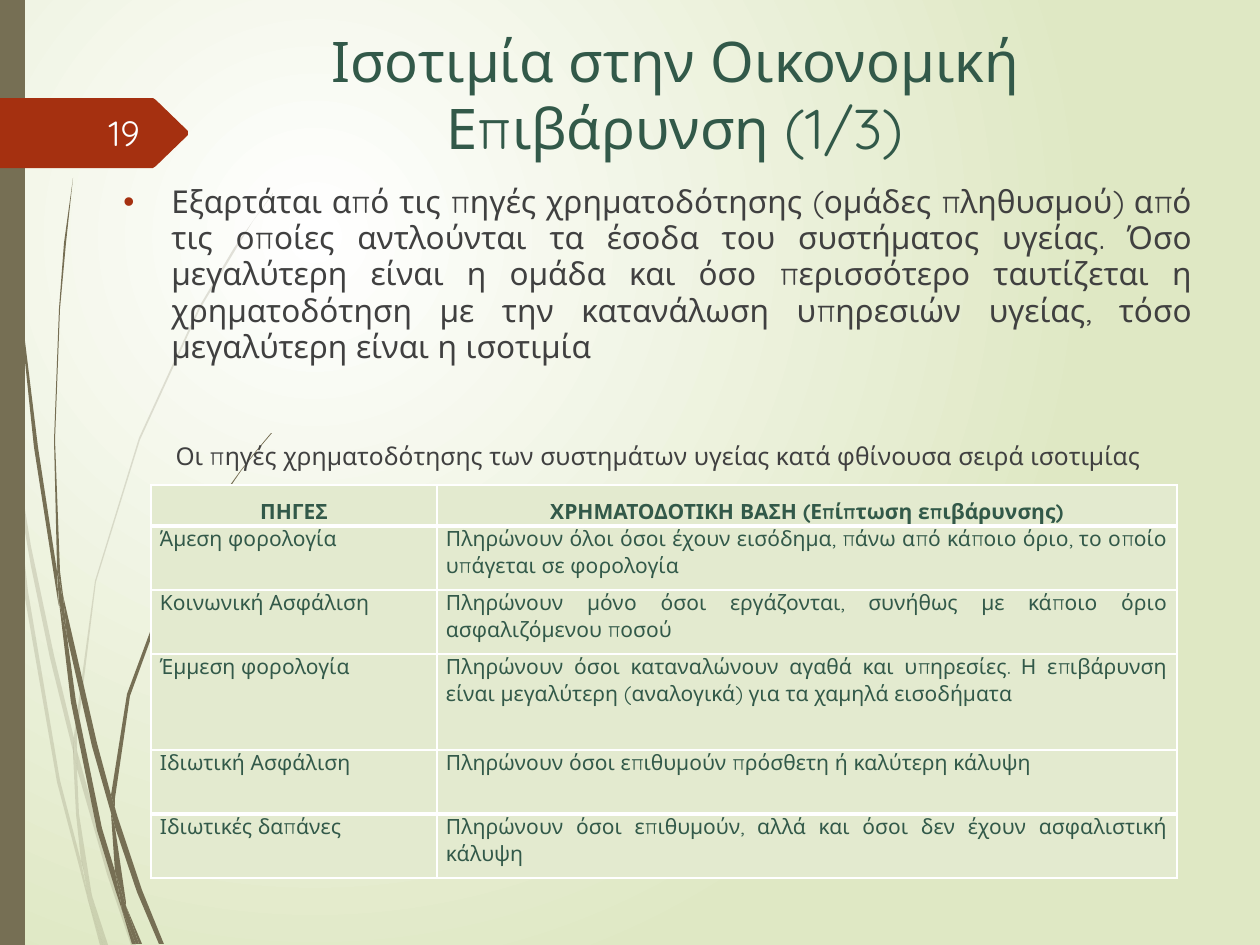
from dataclasses import dataclass

from lxml.etree import SubElement
from pptx import Presentation
from pptx.dml.color import RGBColor
from pptx.enum.shapes import MSO_SHAPE as Shape
from pptx.enum.text import MSO_ANCHOR as Anchor, PP_ALIGN as Align
from pptx.oxml import parse_xml
from pptx.oxml.ns import nsdecls, qn
from pptx.util import Pt

PX = 914400 // 126


@dataclass(frozen=True)
class Theme:
    font: str = "Quicksand"
    heading: str = "325949"
    body: str = "404040"
    accent: str = "A53010"
    stem: str = "766F54"
    cell: str = "E3EACF"
    light: str = "FEFFFF"
    white: str = "FFFFFF"
    edge: str = "DFE8C4"
    title_size: int = 32
    number_size: int = 20
    body_size: int = 18
    caption_size: int = 14
    table_size: int = 12


THEME = Theme()

PALE_STEMS = [
    [(50, 658), (74, 755), (74, 738), (54, 655), (31, 546), (13, 435), (15, 474), (31, 566)],
    [(81, 765), (77, 751), (77, 769), (107, 874), (131, 945), (136, 945), (111, 872)],
    [(105, 945), (108, 945), (92, 896)],
    [(81, 861), (60, 780), (28, 591), (15, 474), (10, 441), (24, 592), (57, 782), (81, 873),
     (88, 900), (87, 891)],
    [(73, 755), (76, 814), (81, 861), (84, 872), (92, 896), (91, 890), (79, 814), (77, 769),
     (77, 766)],
    [(77, 736), (96, 582), (140, 440), (200, 309), (236, 249), (253, 221), (273, 194),
     (273, 193), (253, 221), (234, 248), (199, 307), (139, 438), (95, 581), (74, 736),
     (74, 738), (77, 751)],
    [(88, 900), (100, 945), (103, 945)],
    [(77, 766), (77, 769), (77, 751), (74, 738), (73, 755)],
    [(84, 872), (82, 861), (87, 891), (88, 900), (103, 945), (105, 945), (92, 896)],
]
DARK_STEMS = [
    [(6, 139), (18, 294), (34, 447), (58, 601), (59, 606), (57, 576), (57, 571), (38, 447),
     (19, 292), (8, 137), (5, 60), (4, 0), (3, 0), (4, 60)],
    [(92, 746), (111, 813), (111, 798), (111, 795), (97, 743), (63, 595), (67, 636)],
    [(118, 818), (115, 808), (115, 827), (137, 892), (159, 944), (164, 944), (142, 890)],
    [(115, 871), (102, 828), (76, 701), (67, 636), (59, 601), (71, 702), (97, 830), (116, 892),
     (122, 910), (121, 903)],
    [(63, 595), (60, 571), (55, 440), (60, 309), (66, 243), (73, 178), (64, 243), (59, 309),
     (54, 440), (57, 566), (62, 595)],
    [(139, 944), (142, 944), (126, 906)],
    [(59, 601), (67, 636), (63, 595), (62, 595), (57, 566), (57, 571)],
    [(115, 798), (130, 696), (165, 600), (213, 512), (241, 471), (256, 452), (272, 433),
     (271, 433), (256, 451), (241, 470), (212, 510), (163, 597), (127, 694), (111, 795),
     (115, 808)],
    [(122, 910), (132, 944), (136, 944)],
    [(111, 813), (115, 871), (121, 890), (126, 906), (126, 902), (115, 827), (113, 820)],
    [(111, 813), (113, 820), (115, 827), (115, 808), (111, 795), (111, 798)],
    [(121, 890), (115, 871), (121, 903), (122, 910), (136, 944), (139, 944), (126, 906)],
]
NUMBER_TAG = [(188, 135), (156, 166), (153, 168), (0, 168), (0, 98), (153, 98), (156, 100),
              (188, 131)]

TITLE = "Ισοτιμία στην Οικονομική Επιβάρυνση (1/3)"
STATEMENT = (
    "Εξαρτάται από τις πηγές χρηματοδότησης (ομάδες πληθυσμού) από τις οποίες αντλούνται τα "
    "έσοδα του συστήματος υγείας. Όσο μεγαλύτερη είναι η ομάδα και όσο περισσότερο ταυτίζεται η "
    "χρηματοδότηση με την κατανάλωση υπηρεσιών υγείας, τόσο μεγαλύτερη είναι η ισοτιμία")
CAPTION = "Οι πηγές χρηματοδότησης των συστημάτων υγείας κατά φθίνουσα σειρά ισοτιμίας"
FUNDING_ROWS = [
    ("ΠΗΓΕΣ", "ΧΡΗΜΑΤΟΔΟΤΙΚΗ ΒΑΣΗ (Επίπτωση επιβάρυνσης)"),
    ("Άμεση φορολογία", "Πληρώνουν όλοι όσοι έχουν εισόδημα, πάνω από κάποιο όριο, το οποίο "
                        "υπάγεται σε φορολογία"),
    ("Κοινωνική Ασφάλιση", "Πληρώνουν μόνο όσοι εργάζονται, συνήθως με κάποιο όριο "
                           "ασφαλιζόμενου ποσού"),
    ("Έμμεση φορολογία", "Πληρώνουν όσοι καταναλώνουν αγαθά και υπηρεσίες. Η επιβάρυνση είναι "
                         "μεγαλύτερη (αναλογικά) για τα χαμηλά εισοδήματα"),
    ("Ιδιωτική Ασφάλιση", "Πληρώνουν όσοι επιθυμούν πρόσθετη ή καλύτερη κάλυψη"),
    ("Ιδιωτικές δαπάνες", "Πληρώνουν όσοι επιθυμούν, αλλά και όσοι δεν έχουν ασφαλιστική "
                          "κάλυψη"),
]


def set_background(slide):
    """Radial gradient, from white to the edge colour."""
    background = parse_xml(
        f'<p:bg {nsdecls("p", "a")}><p:bgPr><a:gradFill rotWithShape="1"><a:gsLst>'
        f'<a:gs pos="0"><a:srgbClr val="{THEME.white}"/></a:gs>'
        f'<a:gs pos="100000"><a:srgbClr val="{THEME.edge}"/></a:gs></a:gsLst>'
        '<a:path path="circle"><a:fillToRect l="50000" t="50000" r="100000" b="100000"/></a:path>'
        '</a:gradFill><a:effectLst/></p:bgPr></p:bg>')
    slide.element.cSld.insert(0, background)


def paint(shape, color, opacity=100):
    shape.shadow.inherit = False
    shape.line.fill.background()
    shape.fill.solid()
    shape.fill.fore_color.rgb = RGBColor.from_string(color)
    if opacity < 100:
        tint = shape._element.spPr.find(qn("a:solidFill"))[0]
        SubElement(tint, qn("a:alpha"), val=str(opacity * 1000))


def add_outline(slide, points, color, opacity=100):
    builder = slide.shapes.build_freeform(*points[0], scale=PX)
    builder.add_line_segments(points[1:], close=True)
    paint(builder.convert_to_shape(), color, opacity)


def add_box(slide, left, top, width, height, anchor=Anchor.TOP):
    box = slide.shapes.add_textbox(left * PX, top * PX, width * PX, height * PX)
    frame = box.text_frame
    frame.word_wrap = True
    frame.vertical_anchor = anchor
    return frame


def write(para, text, size, color, align=Align.LEFT, bold=False, spacing=None, before=None):
    para.alignment = align
    if spacing:
        para.line_spacing = spacing
    if before:
        para.space_before = Pt(before)
    span = para.add_run()
    span.text = text
    font = span.font
    font.name, font.size, font.bold = THEME.font, Pt(size), bold
    font.color.rgb = RGBColor.from_string(color)


def add_bullet(para, indent):
    props = para._p.get_or_add_pPr()
    props.set("marL", str(indent * PX))
    props.set("indent", str(-indent * PX))
    color = SubElement(props, qn("a:buClr"))
    SubElement(color, qn("a:srgbClr"), val=THEME.accent)
    SubElement(props, qn("a:buFont"), typeface="Arial")
    SubElement(props, qn("a:buChar"), char="•")


def set_borders(cell, **widths):
    """Draw white borders; widths maps lnL, lnR, lnT and lnB to points."""
    props = cell._tc.get_or_add_tcPr()
    for position, (side, width) in enumerate(widths.items()):
        props.insert(position, parse_xml(
            f'<a:{side} {nsdecls("a")} w="{Pt(width)}"><a:solidFill>'
            f'<a:srgbClr val="{THEME.white}"/></a:solidFill></a:{side}>'))


def add_funding_table(slide, left, top, widths, heights):
    table = slide.shapes.add_table(len(heights), len(widths), left * PX, top * PX,
                                   sum(widths) * PX, sum(heights) * PX).table
    for column, width in zip(table.columns, widths):
        column.width = width * PX
    last = len(heights) - 1
    for i, (row, texts) in enumerate(zip(table.rows, FUNDING_ROWS)):
        row.height = heights[i] * PX
        header = i == 0
        for j, (cell, text) in enumerate(zip(row.cells, texts)):
            cell.margin_left = cell.margin_right = 9 * PX
            cell.margin_top = cell.margin_bottom = 0
            cell.vertical_anchor = Anchor.MIDDLE if header and j else Anchor.TOP
            cell.fill.solid()
            cell.fill.fore_color.rgb = RGBColor.from_string(THEME.cell)
            set_borders(cell, lnL=1, lnR=1, lnT=3 if i in (1, last) else 1,
                        lnB=3 if i in (0, last - 1) else 1)
            write(cell.text_frame.paragraphs[0], text, THEME.table_size, THEME.heading,
                  align=Align.CENTER if header else Align.JUSTIFY, bold=header,
                  spacing=1.5 if header else None)


def main():
    deck = Presentation()
    deck.slide_width, deck.slide_height = 1260 * PX, 945 * PX
    slide = deck.slides.add_slide(deck.slide_layouts[6])
    set_background(slide)

    for points in PALE_STEMS:
        add_outline(slide, points, THEME.stem, opacity=20)
    for points in DARK_STEMS:
        add_outline(slide, points, THEME.stem)
    paint(slide.shapes.add_shape(Shape.RECTANGLE, 0, 0, 25 * PX, 945 * PX), THEME.stem)
    add_outline(slide, NUMBER_TAG, THEME.accent)

    title = add_box(slide, 188, 20, 975, 149)
    write(title.paragraphs[0], TITLE, THEME.title_size, THEME.heading, align=Align.CENTER)

    body = add_box(slide, 111, 178, 1094, 721)
    statement = body.paragraphs[0]
    add_bullet(statement, 48)
    write(statement, STATEMENT, THEME.body_size, THEME.body, align=Align.JUSTIFY, spacing=0.96)
    write(body.add_paragraph(), CAPTION, THEME.caption_size, THEME.body, align=Align.CENTER,
          before=43)

    number = add_box(slide, 71, 108, 81, 50, anchor=Anchor.MIDDLE)
    write(number.paragraphs[0], "19", THEME.number_size, THEME.light, align=Align.RIGHT)

    add_funding_table(slide, 151, 485, widths=[286, 740], heights=[41, 64, 64, 96, 64, 64])
    deck.save("out.pptx")


if __name__ == "__main__":
    main()
